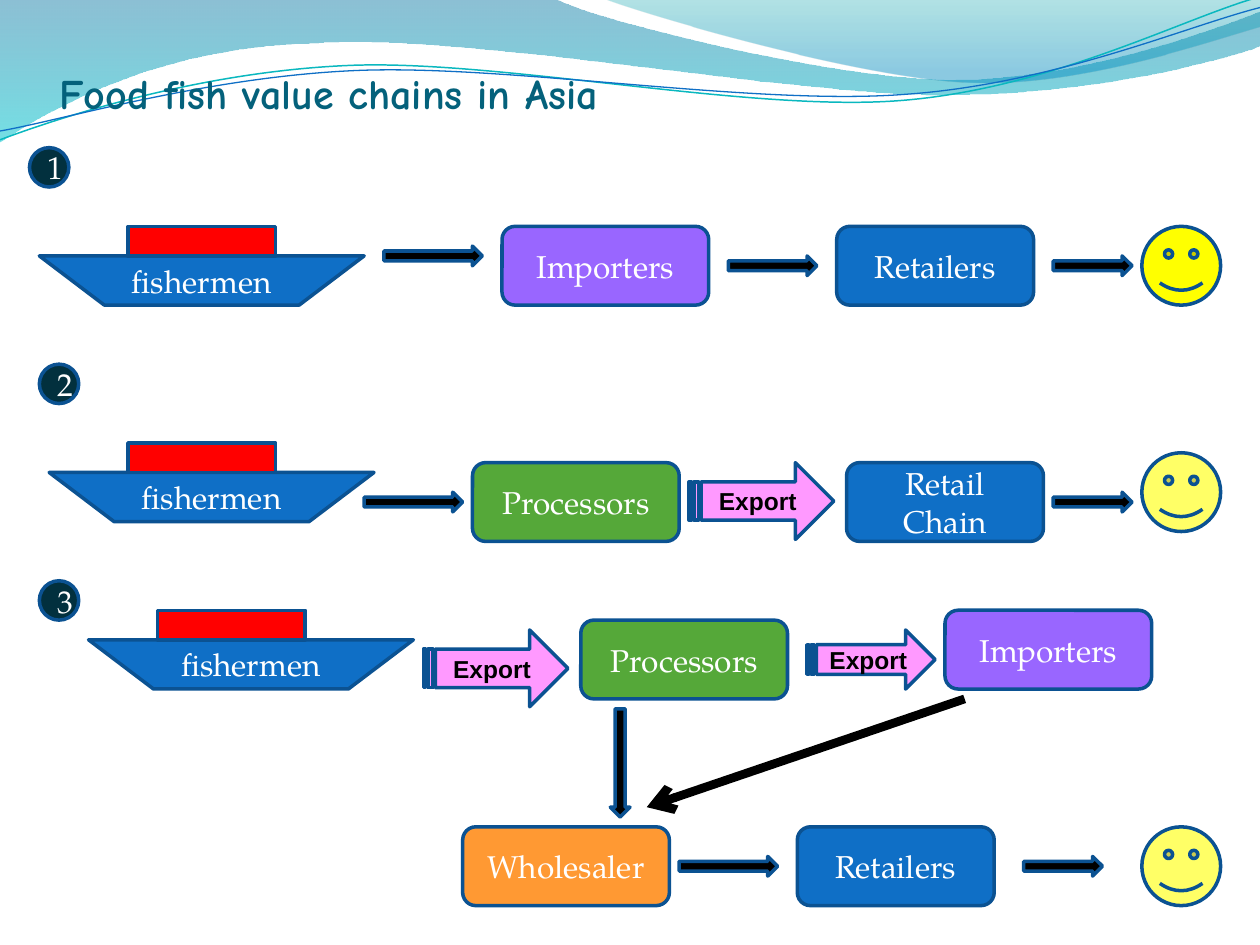
from dataclasses import dataclass
from typing import Optional

from lxml.etree import SubElement
from pptx import Presentation
from pptx.dml.color import RGBColor
from pptx.enum.shapes import MSO_CONNECTOR, MSO_SHAPE as Kind
from pptx.enum.text import MSO_ANCHOR, PP_ALIGN as Align
from pptx.oxml.ns import qn
from pptx.util import Cm, Pt

GRID = 25.4 / 128  # the diagram sits on a grid of 128 columns, in cm
INCH = 2.54
SERIF, SANS, TITLE_FONT = "TeX Gyre Pagella", "Arial", "Comic Neue"
BLUE, OUTLINE, BLACK, WHITE = "0F6FC6", "0B5292", "000000", "FFFFFF"
PURPLE, GREEN, ORANGE, PINK = "9966FF", "55A839", "FF9933", "FF99FF"
RED, YELLOW, PALE_YELLOW, NAVY = "FF0000", "FFFF00", "FFFF66", "02303E"


@dataclass
class Wave:
    """Start point and segments in inches: a pair is a line, six numbers a curve."""
    start: tuple
    segments: list
    stops: tuple = ()  # (position, colour, opacity in percent)
    line: Optional[str] = None
    weight: float = 0


@dataclass
class Node:
    """A diagram shape, placed in grid units."""
    kind: Kind
    left: float
    top: float
    width: float
    height: float
    fill: str
    text: str = ""


def color(value: str) -> RGBColor:
    return RGBColor.from_string(value)


def grid(units: float) -> Cm:
    return Cm(units * GRID)


def bend(shape, segments: list) -> None:
    """Turn each three lines that stand for a curve into one Bézier curve."""
    lines = iter(list(shape._element.iter(qn("a:lnTo"))))
    for segment in segments:
        first = next(lines)
        if len(segment) == 6:
            first.tag = qn("a:cubicBezTo")
            for _ in range(2):
                extra = next(lines)
                first.append(extra[0])
                extra.getparent().remove(extra)


def draw_wave(page, wave: Wave) -> None:
    points = [wave.start]
    for segment in wave.segments:
        points += zip(segment[::2], segment[1::2])
    lengths = [(Cm(x * INCH), Cm(y * INCH)) for x, y in points]
    builder = page.shapes.build_freeform(*lengths[0])
    builder.add_line_segments(lengths[1:], close=bool(wave.stops))
    shape = builder.convert_to_shape()
    bend(shape, wave.segments)
    shape.shadow.inherit = False
    if not wave.stops:
        shape.fill.background()
        shape.line.color.rgb = color(wave.line)
        shape.line.width = Pt(wave.weight)
        return
    shape.line.fill.background()
    shape.fill.gradient()
    shape.fill.gradient_angle = 270
    for stop, (position, value, _) in zip(shape.fill.gradient_stops, wave.stops):
        stop.position = position
        stop.color.rgb = color(value)
    tints = shape._element.spPr.iter(qn("a:srgbClr"))
    for tint, (_, _, opacity) in zip(tints, wave.stops):
        SubElement(tint, qn("a:alpha"), val=str(opacity * 1000))


def draw_node(page, node: Node) -> None:
    shape = page.shapes.add_shape(node.kind, grid(node.left), grid(node.top),
                                  grid(node.width), grid(node.height))
    shape.shadow.inherit = False
    shape.fill.solid()
    shape.fill.fore_color.rgb = color(node.fill)
    shape.line.color.rgb = color(OUTLINE)
    shape.line.width = Pt(2)
    if not node.text:
        return
    export = node.kind == Kind.STRIPED_RIGHT_ARROW
    frame = shape.text_frame
    frame.text = node.text
    frame.word_wrap = True
    frame.vertical_anchor = MSO_ANCHOR.MIDDLE
    para = frame.paragraphs[0]
    para.alignment = Align.CENTER
    para.font.name = SANS if export else SERIF
    para.font.size = Pt(14 if export else 18)
    para.font.bold = export
    para.font.color.rgb = color(BLACK if export else WHITE)


def draw_thick_arrow(page, start: tuple, end: tuple) -> None:
    arrow = page.shapes.add_connector(MSO_CONNECTOR.STRAIGHT, *map(grid, start + end))
    arrow.line.color.rgb = color(BLACK)
    arrow.line.width = Pt(5)
    SubElement(arrow.line._get_or_add_ln(), qn("a:tailEnd"), type="arrow")
    SubElement(arrow._element.spPr, qn("a:effectLst"))


def draw_title(page, text: str) -> None:
    title = page.shapes.title
    title.left, title.top, title.width, title.height = Cm(1.2), Cm(0.6), Cm(22.86), Cm(1.78)
    frame = title.text_frame
    frame.text = text
    frame.vertical_anchor = MSO_ANCHOR.BOTTOM
    frame.margin_left = frame.margin_right = frame.margin_bottom = 0
    para = frame.paragraphs[0]
    para.alignment = Align.LEFT
    para.font.name, para.font.size, para.font.bold = TITLE_FONT, Pt(24), True
    para.font.color.rgb = color("04617B")
    page.shapes._spTree.append(title._element)  # in front of the waves


def number(left: float, top: float, text: str) -> list:
    return [Node(Kind.OVAL, left, top, 4, 4, NAVY, text)]


def boat(left: float, top: float, cabin_left: float) -> list:
    return [Node(Kind.FLOWCHART_MANUAL_OPERATION, left, top, 33, 5, BLUE, "fishermen"),
            Node(Kind.FLOWCHART_PROCESS, cabin_left, top - 3, 15, 3, RED)]


def step(left: float, top: float, fill: str, text: str) -> list:
    width = 20 if fill == BLUE else 21
    return [Node(Kind.ROUNDED_RECTANGLE, left, top, width, 8, fill, text)]


def arrow(left: float, top: float, width: float) -> list:
    return [Node(Kind.RIGHT_ARROW, left, top, width, 2, BLACK)]


def export_arrow(left: float, top: float, width: float = 14.7, height: float = 7.8) -> list:
    return [Node(Kind.STRIPED_RIGHT_ARROW, left, top, width, height, PINK, "Export")]


def consumer(top: float, fill: str) -> list:
    return [Node(Kind.SMILEY_FACE, 116, top, 8, 8, fill)]


WAVES = [
    Wave((0, 0), [(4.4, -0.01), (4.76, 0.17, 6.64, 0.63, 7.58, 0.63),
                  (8.53, 0.63, 9.58, 0.26, 10, 0.09), (10.01, 0.36),
                  (9.83, 0.44, 8.7, 0.76, 7.46, 0.75), (6.22, 0.75, 3.82, 0.28, 2.57, 0.34),
                  (1.29, 0.36, 0.46, 0.83, -0.01, 1.13), (0, 0)],
         stops=((0, "0074A1", 45), (1, "00C6CF", 55))),
    Wave((4.79, -0.01), [(5.09, 0.11, 6.82, 0.62, 7.69, 0.65),
                         (8.56, 0.69, 9.61, 0.32, 10, 0.21), (10, 0), (4.79, -0.01)],
         stops=((0, "00A1A9", 30), (0.8, "008BBF", 45))),
    Wave((0, 1.11), [(0.48, 0.93, 1.58, 0.57, 2.77, 0.52), (3.95, 0.47, 5.93, 0.89, 7.13, 0.8),
                     (8.33, 0.71, 9.38, 0.15, 9.98, -0.02)], line="0AB8BF", weight=0.85),
    Wave((0, 1.04), [(0.47, 0.96, 1.64, 0.61, 2.83, 0.56), (4.03, 0.51, 5.97, 0.84, 7.17, 0.75),
                     (8.36, 0.67, 9.41, 0.21, 10, 0.06)], line=BLUE, weight=0.75),
]

CHAINS = [
    [*number(3, 15, "1"), *boat(4, 26, 13), *arrow(39, 25, 10),
     *step(51, 23, PURPLE, "Importers"), *arrow(74, 26, 9),
     *step(85, 23, BLUE, "Retailers"), *arrow(107, 26, 8), *consumer(23, YELLOW)],
    [*number(4, 37, "2"), *boat(5, 48, 13), *arrow(37, 50, 10),
     *step(48, 47, GREEN, "Processors"), *export_arrow(70, 47),
     *step(86, 47, BLUE, "Retail Chain"), *arrow(107, 50, 8), *consumer(46, PALE_YELLOW)],
    [*number(4, 59, "3"), *boat(9, 65, 16), *export_arrow(43, 64),
     *step(59, 63, GREEN, "Processors"), *export_arrow(82, 64, 13, 6),
     *step(96, 62, PURPLE, "Importers"), Node(Kind.DOWN_ARROW, 62, 72, 2, 11, BLACK),
     *step(47, 84, ORANGE, "Wholesaler"), *arrow(69, 87, 10),
     *step(81, 84, BLUE, "Retailers"), *arrow(104, 87, 8), *consumer(84, PALE_YELLOW)],
]


def main() -> None:
    deck = Presentation()
    deck.slide_width, deck.slide_height = Cm(25.4), Cm(19.05)
    page = deck.slides.add_slide(deck.slide_layouts.get_by_name("Title Only"))
    for wave in WAVES:
        draw_wave(page, wave)
    draw_title(page, "Food fish value chains in Asia")
    for chain in CHAINS:
        for node in chain:
            draw_node(page, node)
    draw_thick_arrow(page, (98, 71), (65.7, 82))
    deck.save("out.pptx")


if __name__ == "__main__":
    main()
